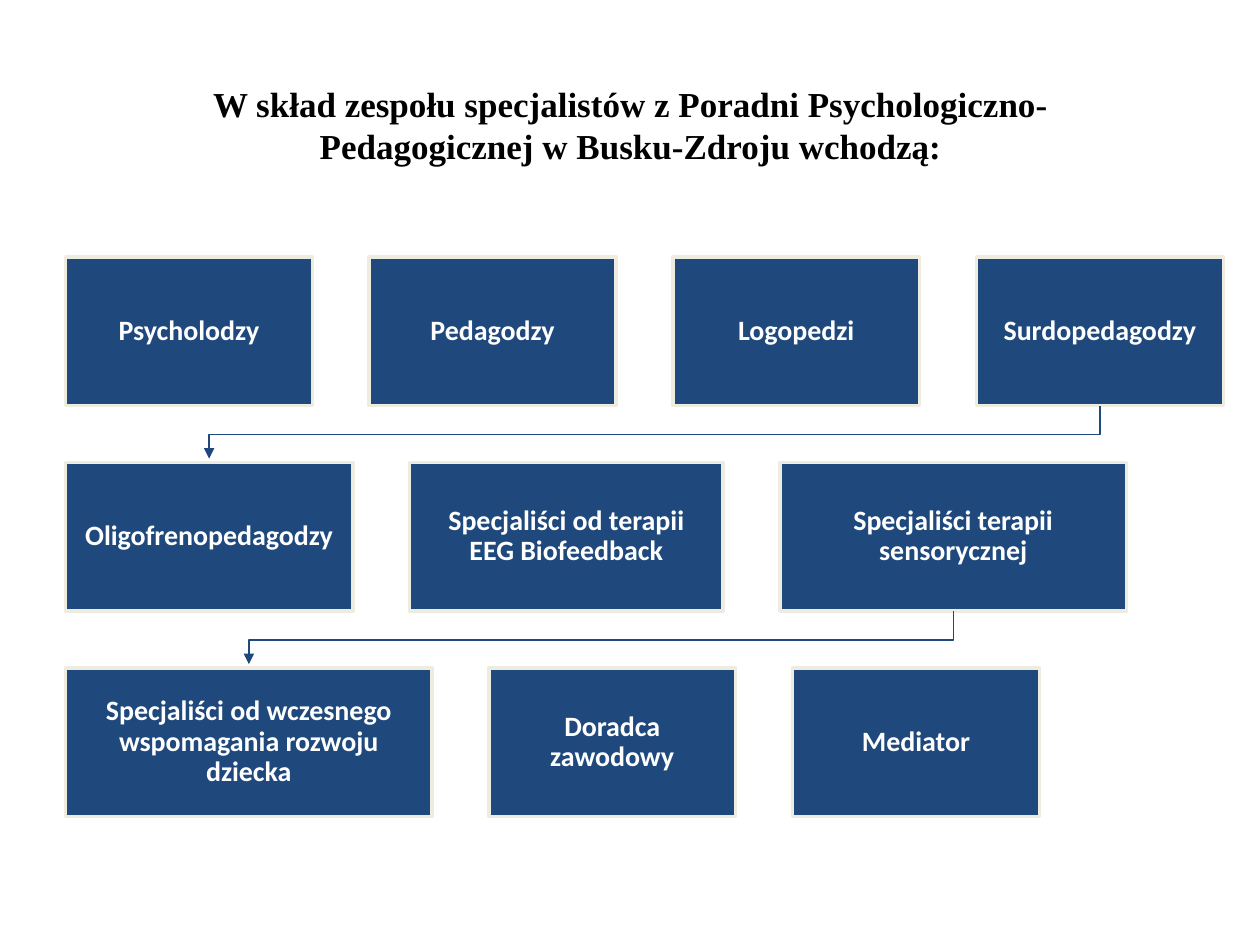
from lxml import etree
from pptx import Presentation
from pptx.dml.color import RGBColor
from pptx.enum.shapes import MSO_SHAPE
from pptx.enum.text import MSO_ANCHOR, MSO_AUTO_SIZE, PP_ALIGN
from pptx.oxml.ns import qn
from pptx.util import Inches, Pt

RECTANGLE = MSO_SHAPE.RECTANGLE
MIDDLE = MSO_ANCHOR.MIDDLE
CENTER = PP_ALIGN.CENTER
NO_AUTOFIT = MSO_AUTO_SIZE.NONE

# Content: each row lists (specialist, box width)
TITLE = ("W skład zespołu specjalistów z Poradni Psychologiczno-"
         "Pedagogicznej w Busku-Zdroju wchodzą:")
ROWS = [
    [("Psycholodzy", 1.96), ("Pedagodzy", 1.96),
     ("Logopedzi", 1.96), ("Surdopedagodzy", 1.96)],
    [("Oligofrenopedagodzy", 2.28),
     ("Specjaliści od terapii EEG Biofeedback", 2.49),
     ("Specjaliści terapii sensorycznej", 2.75)],
    [("Specjaliści od wczesnego wspomagania rozwoju dziecka", 2.91),
     ("Doradca zawodowy", 1.96), ("Mediator", 1.96)],
]

THEME = {
    "box": RGBColor(0x1F, 0x49, 0x7D),
    "border": RGBColor(0xEE, 0xEC, 0xE1),
    "title_text": RGBColor(0, 0, 0),
    "box_text": RGBColor(0xFF, 0xFF, 0xFF),
    "title_font": "Times New Roman",
    "box_font": "Calibri",
    "title_size": 20,
    "box_size": 16,
}

# Layout in inches
LEFT, TOP = 0.52, 2.04
BOX_HEIGHT, ROW_PITCH, COLUMN_GAP = 1.18, 1.63, 0.45
ARROW_BEND, ARROW_LENGTH = 0.23, 0.42


def write_text(shape, text, *, font, size, color, margins,
               line_spacing=1.0, space_after=0):
    frame = shape.text_frame
    frame.word_wrap = True
    frame.auto_size = NO_AUTOFIT
    frame.vertical_anchor = MIDDLE
    frame.margin_left = frame.margin_right = Inches(margins[0])
    frame.margin_top = frame.margin_bottom = Inches(margins[1])
    frame.text = text
    paragraph = frame.paragraphs[0]
    paragraph.alignment = CENTER
    paragraph.line_spacing = line_spacing
    paragraph.space_after = Pt(space_after)
    paragraph.font.name = font
    paragraph.font.size = Pt(size)
    paragraph.font.bold = True
    paragraph.font.color.rgb = color


def add_box(slide, text, left, top, width):
    box = slide.shapes.add_shape(RECTANGLE, Inches(left), Inches(top),
                                 Inches(width), Inches(BOX_HEIGHT))
    box.shadow.inherit = False
    box.fill.solid()
    box.fill.fore_color.rgb = THEME["box"]
    box.line.color.rgb = THEME["border"]
    box.line.width = Pt(2)
    write_text(box, text, font=THEME["box_font"], size=THEME["box_size"],
               color=THEME["box_text"], margins=(0.12, 0.12),
               line_spacing=0.9, space_after=5.6)


def add_row_arrow(slide, start_x, end_x, top):
    bend = top + ARROW_BEND
    points = [(start_x, bend), (end_x, bend), (end_x, top + ARROW_LENGTH)]
    builder = slide.shapes.build_freeform(Inches(start_x), Inches(top))
    builder.add_line_segments([(Inches(x), Inches(y)) for x, y in points],
                              close=False)
    arrow = builder.convert_to_shape()
    arrow.shadow.inherit = False
    arrow.fill.background()
    arrow.line.color.rgb = THEME["box"]
    arrow.line.width = Pt(0.75)
    line = arrow.line._get_or_add_ln()
    etree.SubElement(line, qn("a:tailEnd"), type="triangle")


def main():
    presentation = Presentation()
    presentation.slide_width = Inches(10)
    presentation.slide_height = Inches(7.5)
    slide = presentation.slides.add_slide(presentation.slide_layouts[5])

    # Title
    title = slide.shapes.title
    title.left, title.top = Inches(0.91), Inches(0.6)
    title.width, title.height = Inches(8.19), Inches(0.77)
    write_text(title, TITLE, font=THEME["title_font"],
               size=THEME["title_size"], color=THEME["title_text"],
               margins=(0.1, 0.05))

    # Rows of boxes, each joined to the next by an elbow arrow
    previous_center = None
    for index, row in enumerate(ROWS):
        top = TOP + index * ROW_PITCH
        if previous_center is not None:
            add_row_arrow(slide, previous_center, LEFT + row[0][1] / 2,
                          top - ROW_PITCH + BOX_HEIGHT)
        left = LEFT
        for text, width in row:
            add_box(slide, text, left, top, width)
            previous_center = left + width / 2
            left += width + COLUMN_GAP

    presentation.save("out.pptx")


if __name__ == "__main__":
    main()
